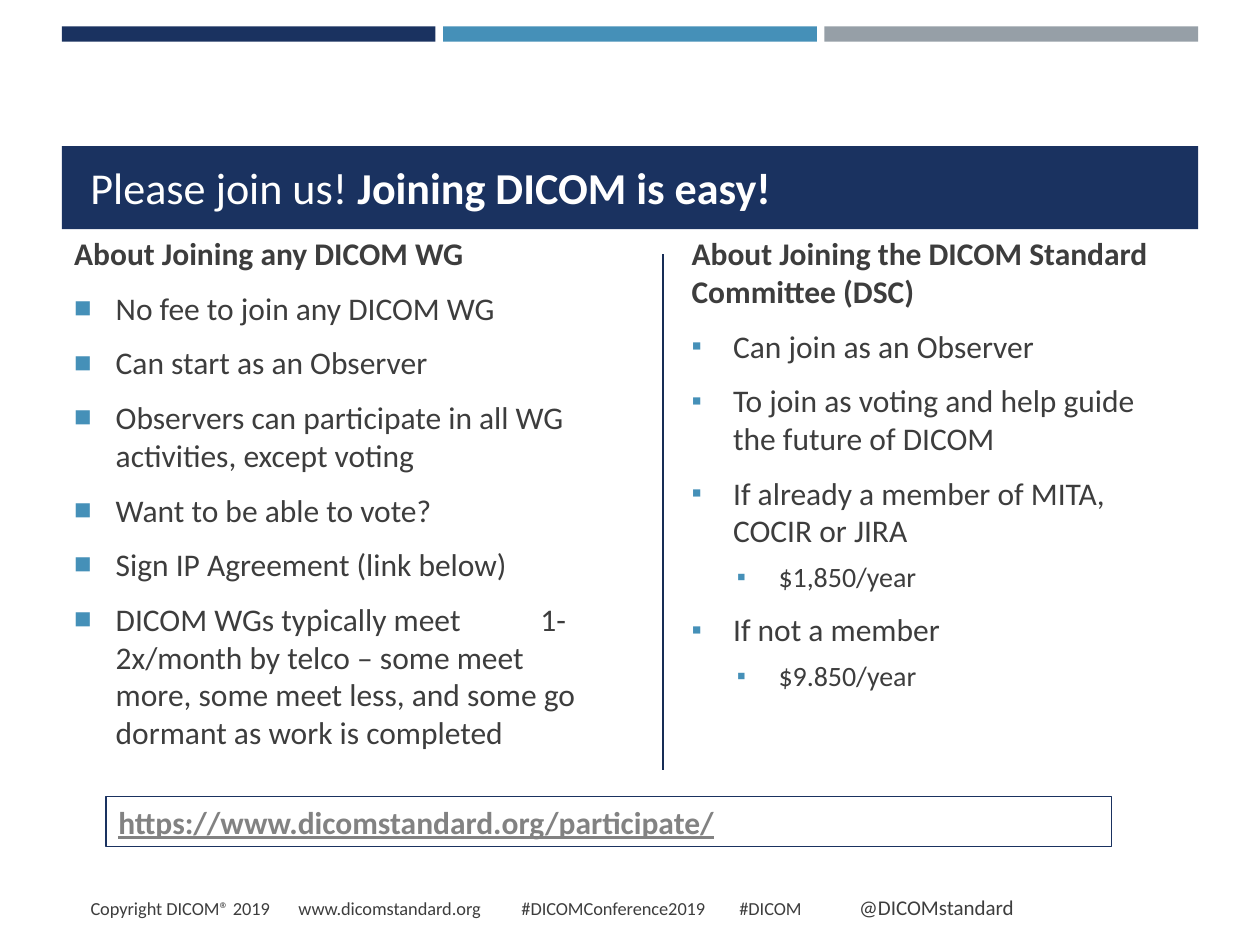
import pptx
import pptx.util
import pptx.dml.color
import pptx.enum.shapes
import pptx.enum.text
import pptx.oxml
import pptx.oxml.ns

COLORS = {
    "navy": "1A3260",
    "blue": "4590B8",
    "grey": "969FA7",
    "divider": "172D56",
    "text": "3D3D3D",
    "link": "828282",
    "white": "FFFFFF",
}
FONT = "Calibri"
COLUMNS, ROWS = 100, 75
CELL = pptx.util.Inches(0.1)
MARGIN, CONTENT_WIDTH = 4.9, 90.2
BAR_GAP = 0.6
HANGING = 3.3

WORKING_GROUP = [
    "No fee to join any DICOM WG",
    "Can start as an Observer",
    "Observers can participate in all WG activities, except voting",
    "Want to be able to vote?",
    "Sign IP Agreement (link below)",
    "DICOM WGs typically meet\t1-2x/month by telco – some meet more, "
    "some meet less, and some go dormant as work is completed",
]
COMMITTEE = [
    "Can join as an Observer",
    "To join as voting and help guide the future of DICOM",
    "If already a member of MITA, COCIR or JIRA",
    ("$1,850/year",),
    "If not a member",
    ("$9.850/year",),
]
FOOTER = [
    ("Copyright DICOM® 2019", 10.5),
    ("\twww.dicomstandard.org", 10.5),
    ("\t#DICOMConference2019", 10.5),
    ("\t#DICOM", 10.5),
    ("\t@DICOMstandard", 12),
]


def cells(*counts):
    return [round(count * CELL) for count in counts]


def rgb(name):
    return pptx.dml.color.RGBColor.from_string(COLORS[name])


def style(font, size, color="text", bold=False):
    font.name = FONT
    font.size = pptx.util.Pt(size)
    font.bold = bold
    font.color.rgb = rgb(color)


def add_properties(paragraph, *fragments):
    properties = paragraph._p.get_or_add_pPr()
    for fragment in fragments:
        tag, content = fragment
        properties.append(pptx.oxml.parse_xml(
            f'<a:{tag} {pptx.oxml.ns.nsdecls("a")}{content}'))


def set_tabs(paragraph, *stops):
    tabs = "".join(f'<a:tab pos="{stop}" algn="l"/>' for stop in cells(*stops))
    add_properties(paragraph, ("tabLst", f">{tabs}</a:tabLst>"))


def set_bullet(paragraph, symbol, level):
    properties = paragraph._p.get_or_add_pPr()
    left, hanging = cells(6.9 if level else HANGING, HANGING)
    properties.set("marL", str(left))
    properties.set("indent", str(-hanging))
    add_properties(
        paragraph,
        ("buClr", f'><a:srgbClr val="{COLORS["blue"]}"/></a:buClr>'),
        ("buSzPct", ' val="92000"/>'),
        ("buFont", ' typeface="Arial"/>'),
        ("buChar", f' char="{symbol}"/>'),
    )


def add_rectangle(slide, place, fill=None, outline=None):
    rectangle = slide.shapes.add_shape(
        pptx.enum.shapes.MSO_SHAPE.RECTANGLE, *cells(*place))
    rectangle.shadow.inherit = False
    if fill:
        rectangle.fill.solid()
        rectangle.fill.fore_color.rgb = rgb(fill)
    else:
        rectangle.fill.background()
    if outline:
        rectangle.line.color.rgb = rgb(outline)
        rectangle.line.width = pptx.util.Pt(0.75)
    else:
        rectangle.line.fill.background()
    return rectangle


def add_text_frame(slide, place):
    frame = slide.shapes.add_textbox(*cells(*place)).text_frame
    frame.word_wrap = True
    return frame


def add_runs(paragraph, parts, color="text"):
    for text, size, bold in parts:
        run = paragraph.add_run()
        run.text = text
        style(run.font, size, color, bold)


def add_bars(slide):
    width = (CONTENT_WIDTH - 2 * BAR_GAP) / 3
    for index, color in enumerate(["navy", "blue", "grey"]):
        left = MARGIN + index * (width + BAR_GAP)
        add_rectangle(slide, (left, 2.1, width, 1.2), color)


def add_title(slide):
    add_rectangle(slide, (MARGIN, 11.6, CONTENT_WIDTH, 6.6), "navy")
    frame = add_text_frame(slide, (6.2, 11.7, 86, 6.2))
    frame.vertical_anchor = pptx.enum.text.MSO_ANCHOR.MIDDLE
    add_runs(frame.paragraphs[0], [
        ("Please join us! ", 25.2, False),
        ("Joining DICOM is easy!", 25.2, True),
    ], "white")


def add_topic(slide, place, heading, points, symbol):
    frame = add_text_frame(slide, place)
    opening = frame.paragraphs[0]
    opening.text = heading
    opening.space_after = pptx.util.Pt(6)
    style(opening.runs[0].font, 18, bold=True)
    for point in points:
        level = int(isinstance(point, tuple))
        text = point[0] if level else point
        paragraph = frame.add_paragraph()
        paragraph.text = text
        paragraph.level = level
        paragraph.space_before = pptx.util.Pt(0 if level else 3.6)
        paragraph.space_after = pptx.util.Pt(6)
        set_bullet(paragraph, symbol, level)
        if "\t" in text:
            set_tabs(paragraph, 37)
        for run in paragraph.runs:
            style(run.font, 16 if level else 18)


def add_divider(slide):
    divider = slide.shapes.add_connector(
        pptx.enum.shapes.MSO_CONNECTOR.STRAIGHT,
        *cells(52.6, 20.2, 52.6, 61.1))
    divider.line.color.rgb = rgb("divider")
    divider.line.width = pptx.util.Pt(1)
    divider._element.spPr.append(pptx.oxml.parse_xml(
        f'<a:effectLst {pptx.oxml.ns.nsdecls("a")}/>'))


def add_address(slide):
    frame = add_rectangle(
        slide, (8.4, 63.2, 79.8, 4), outline="navy").text_frame
    frame.text = "https://www.dicomstandard.org/participate/"
    paragraph = frame.paragraphs[0]
    paragraph.alignment = pptx.enum.text.PP_ALIGN.LEFT
    font = paragraph.runs[0].font
    style(font, 18, "link", True)
    font.underline = True


def add_footer(slide):
    paragraph = add_text_frame(slide, (6.2, 70.5, 88.2, 3.4)).paragraphs[0]
    set_tabs(paragraph, 16.5, 34.2, 51.5, 61)
    add_runs(paragraph, [(text, size, False) for text, size in FOOTER])


def main():
    deck = pptx.Presentation()
    deck.slide_width, deck.slide_height = cells(COLUMNS, ROWS)
    slide = deck.slides.add_slide(deck.slide_layouts[6])
    add_bars(slide)
    add_title(slide)
    add_topic(slide, (MARGIN, 18.1, 42.5, 46.5),
              "About Joining any DICOM WG", WORKING_GROUP, "■")
    add_topic(slide, (53.9, 18.1, 39.9, 44.5),
              "About Joining the DICOM Standard Committee (DSC)",
              COMMITTEE, "▪")
    add_divider(slide)
    add_address(slide)
    add_footer(slide)
    deck.save("out.pptx")


if __name__ == "__main__":
    main()
